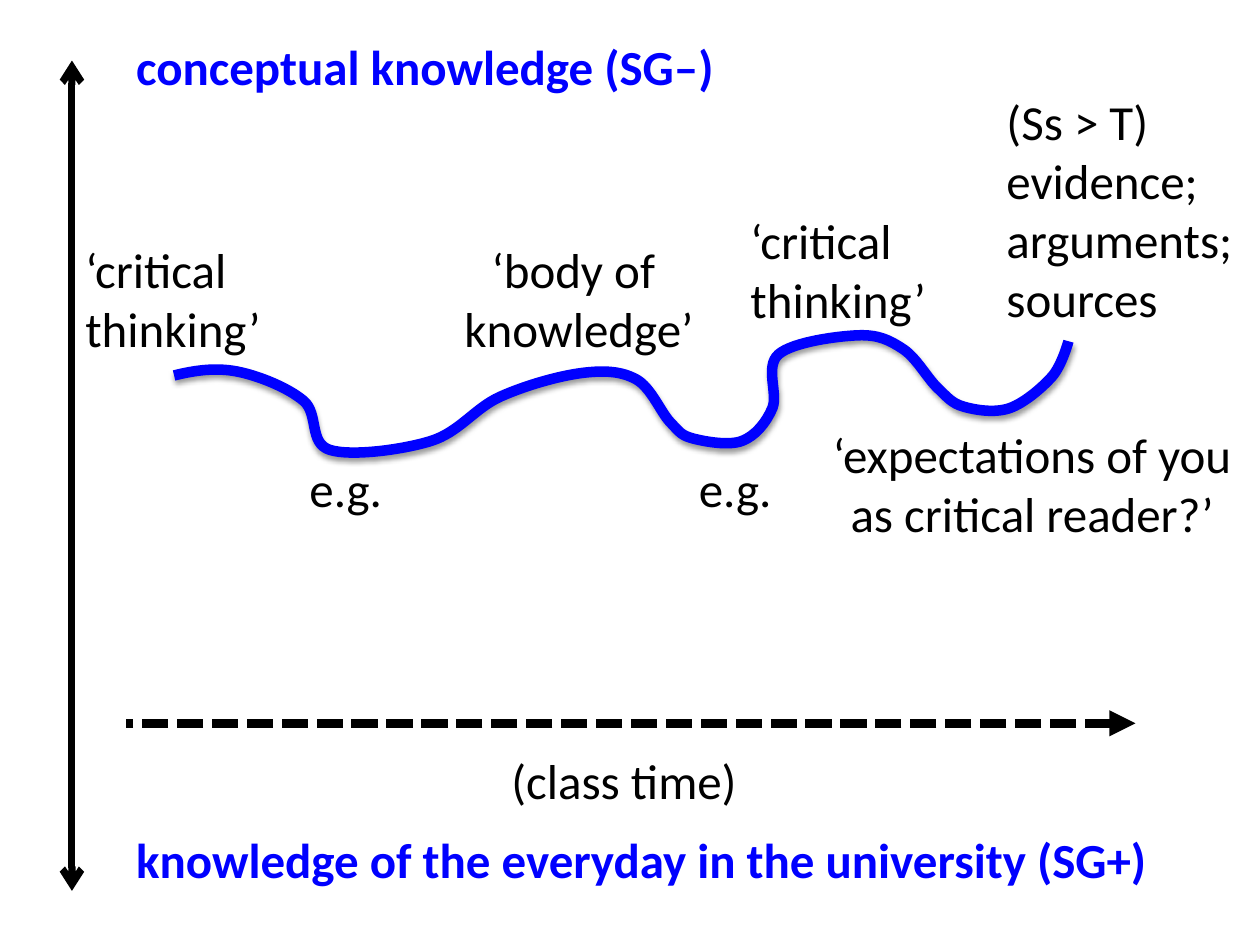
from collections import namedtuple

from lxml import etree
from pptx import Presentation
from pptx.dml.color import RGBColor
from pptx.enum import dml, shapes, text
from pptx.oxml import ns
from pptx.util import Cm, Pt

COLORS = {"ink": "000000", "blue": "0000FF"}
FONT, SIZE = "Calibri", 28
Box = namedtuple("Box", "left top width height")

# Points the wave passes through, in cm from the corner of its box
WAVE_POINTS = [
    (0, 0.81), (1.27, 0.73), (2.61, 1.32), (3.14, 2.31), (5.18, 2.13),
    (6.57, 1.24), (8.22, 0.76), (9.32, 0.89), (10, 1.75), (10.46, 2.08),
    (11.45, 2.13), (12.06, 1.47), (12.19, 0.38), (13.79, 0), (14.7, 0.28),
    (15.39, 1.06), (15.92, 1.44), (16.84, 1.47), (17.7, 0.83), (18.03, 0.12),
]
WAVE_LEAD_IN = (-1.17, 1.34)  # sets the slope at the start

# Box within the region, paragraphs, centred, wrapped
WAVE_LABELS = [
    (Box(0, 2.97, 4.04, 2.64), ["‘critical", "thinking’"], False, False),
    (Box(4.52, 7.39, 2.49, 1.45), ["e.g."], False, True),
    (Box(5.77, 2.97, 8.86, 2.64), ["‘body of ", "knowledge’"], True, True),
    (Box(14.99, 6.71, 8.69, 2.64),
     ["‘expectations of you as critical reader?’"], True, True),
    (Box(12.37, 7.39, 2.08, 1.45), ["e.g."], False, True),
    (Box(13.41, 2.39, 4.04, 2.64), ["‘critical", "thinking’"], False, False),
    (Box(18.57, 0, 5.13, 5.05),
     ["(Ss > T)", "evidence;", "arguments;", "sources"], False, False),
]


def color(name):
    return RGBColor.from_string(COLORS[name])


def add_span(para, words, tint, bold=False):
    span = para.add_run()
    span.text = words
    span.font.name, span.font.size = FONT, Pt(SIZE)
    span.font.bold = bold
    span.font.color.rgb = color(tint)


def add_label(page, region, box, lines, centred=False, wrapped=False):
    label = page.shapes.add_textbox(Cm(region.left + box.left),
                                    Cm(region.top + box.top),
                                    Cm(box.width), Cm(box.height))
    frame = label.text_frame
    frame.word_wrap = wrapped
    frame.auto_size = text.MSO_AUTO_SIZE.SHAPE_TO_FIT_TEXT
    for number, words in enumerate(lines):
        para = frame.add_paragraph() if number else frame.paragraphs[0]
        if centred:
            para.alignment = text.PP_ALIGN.CENTER
        add_span(para, words, "ink")


def add_arrow(page, start, end, weight, dash=None, **ends):
    arrow = page.shapes.add_connector(
        shapes.MSO_CONNECTOR.STRAIGHT, *map(Cm, start + end))
    arrow.line.color.rgb = color("ink")
    arrow.line.width = Pt(weight)
    if dash is not None:
        arrow.line.dash_style = dash
    properties = arrow.element.spPr
    outline = properties.find(ns.qn("a:ln"))
    for name, kind in ends.items():
        etree.SubElement(outline, ns.qn(f"a:{name}"), type=kind)
    etree.SubElement(properties, ns.qn("a:effectLst"))


def fill_heading(holder, box, words):
    """Move a placeholder and write one bold blue line in it."""
    holder.left, holder.top, holder.width, holder.height = map(Cm, box)
    frame = holder.text_frame
    frame.auto_size = text.MSO_AUTO_SIZE.NONE
    frame.vertical_anchor = text.MSO_ANCHOR.TOP
    frame.word_wrap = True
    para = frame.paragraphs[0]
    para.alignment = text.PP_ALIGN.LEFT
    add_span(para, words, "blue", bold=True)
    layout = para._p.get_or_add_pPr()
    layout.set("marL", "0")
    layout.set("indent", "0")
    etree.SubElement(layout, ns.qn("a:buNone"))


def bend_through(curve, points, before, after):
    """Turn the straight segments into a smooth curve through the points."""
    knots = [before, *points, after]
    segments = list(curve.element.iter(ns.qn("a:lnTo")))
    for i, segment in enumerate(segments, start=1):
        p0, p1, p2, p3 = knots[i - 1:i + 3]
        controls = [[a + (c - b) / 6 for a, b, c in zip(p1, p0, p2)],
                    [a - (c - b) / 6 for a, b, c in zip(p2, p1, p3)]]
        segment.tag = ns.qn("a:cubicBezTo")
        bezier = etree.Element(ns.qn("a:cubicBezTo"))
        for x, y in [*controls, p2]:
            etree.SubElement(bezier, ns.qn("a:pt"), x=str(int(Cm(x))), y=str(int(Cm(y))))
        segment.getparent().replace(segment, bezier)


def add_soft_shadow(shape):
    shape.shadow.inherit = False
    effects = shape.element.spPr.find(ns.qn("a:effectLst"))
    shadow = etree.SubElement(effects, ns.qn("a:outerShdw"), blurRad="40000",
                              dist="20000", dir="5400000", rotWithShape="0")
    tint = etree.SubElement(shadow, ns.qn("a:srgbClr"), val=COLORS["ink"])
    etree.SubElement(tint, ns.qn("a:alpha"), val="38000")


def add_wave(page, box):
    corners = [(Cm(x), Cm(y)) for x, y in WAVE_POINTS]
    builder = page.shapes.build_freeform(*corners[0])
    builder.add_line_segments(corners[1:], close=False)
    wave = builder.convert_to_shape(Cm(box.left), Cm(box.top))
    bend_through(wave, WAVE_POINTS, WAVE_LEAD_IN, WAVE_POINTS[-2])
    wave.fill.background()
    wave.line.color.rgb = color("blue")
    wave.line.width = Pt(6)
    add_soft_shadow(wave)


def add_wave_region(page, region):
    add_wave(page, Box(region.left + 2.04, region.top + 5.03, 18.03, 2.31))
    for label in WAVE_LABELS:
        add_label(page, region, *label)


def add_time_axis(page, region):
    right = region.left + region.width
    add_arrow(page, (right, region.top), (region.left, region.top), 5,
              dml.MSO_LINE.SQUARE_DOT, headEnd="triangle")
    add_label(page, region, Box(7.52, 0.43, 5.11, 1.45), ["(class time)"])


def add_knowledge_axis(page, region):
    add_arrow(page, (region.left, region.top),
              (region.left, region.top + region.height), 4,
              headEnd="arrow", tailEnd="arrow")


def main():
    deck = Presentation()
    deck.slide_width, deck.slide_height = Cm(25.4), Cm(19.05)
    page = deck.slides.add_slide(deck.slide_layouts[1])

    # Names of the two ends of the vertical axis
    top_name, bottom_name = page.placeholders
    fill_heading(top_name, Box(2.49, 0.61, 18.49, 1.96), "conceptual knowledge (SG–)")
    fill_heading(bottom_name, Box(2.49, 16.59, 22.3, 1.96),
                 "knowledge of the everyday in the university (SG+)")

    # Axes and the wave between them
    add_knowledge_axis(page, Box(1.45, 1.22, 0, 16.74))
    add_time_axis(page, Box(2.54, 14.58, 20.35, 1.88))
    add_wave_region(page, Box(1.47, 1.73, 23.7, 9.35))

    deck.save("out.pptx")


if __name__ == "__main__":
    main()
